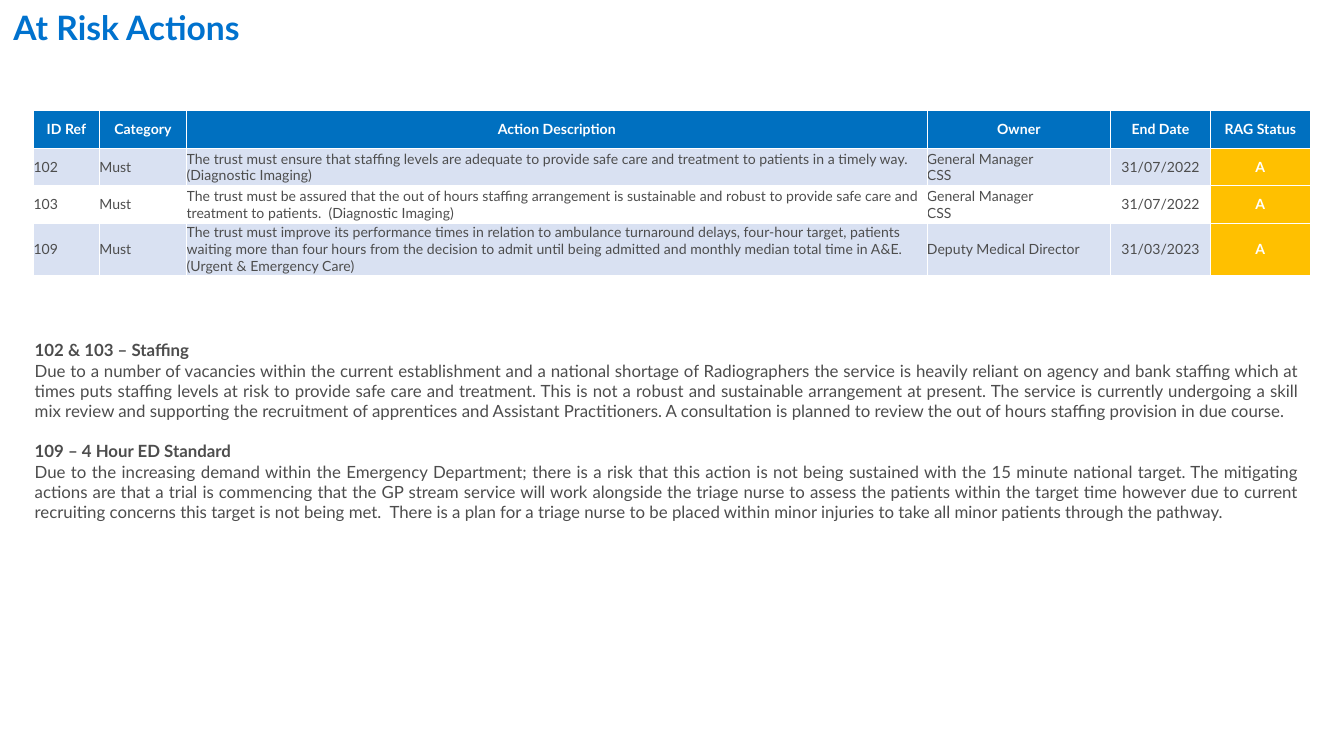
from dataclasses import dataclass

from lxml import etree
from pptx import Presentation
from pptx.dml.color import RGBColor
from pptx.enum import text
from pptx.oxml import ns
from pptx.util import Pt

FONT = "Lato"
COLOURS = {
    "title": "0072CE",
    "header": "0070C0",
    "band": "D9E1F2",
    "amber": "FFC000",
    "ink": "4D4D4D",
    "white": "FFFFFF",
}
LEFT, CENTRE, JUSTIFY = text.PP_ALIGN.LEFT, text.PP_ALIGN.CENTER, text.PP_ALIGN.JUSTIFY
COLUMN_WIDTHS = (35.2, 46.8, 396.6, 98.5, 53.3, 53.6)
HEADINGS = ("ID Ref", "Category", "Action Description", "Owner", "End Date", "RAG Status")


@dataclass
class Row:
    values: tuple
    fill: str | None = None
    is_header: bool = False


@dataclass
class Commentary:
    heading: str
    body: str


STAFFING_ROWS = [
    Row(HEADINGS, "header", True),
    Row(("102", "Must",
         "The trust must ensure that staffing levels are adequate to provide safe care and "
         "treatment to patients in a timely way. (Diagnostic Imaging)",
         "General Manager\nCSS", "31/07/2022", "A"), "band"),
    Row(("103", "Must",
         "The trust must be assured that the out of hours staffing arrangement is sustainable "
         "and robust to provide safe care and treatment to patients.  (Diagnostic Imaging)",
         "General Manager\nCSS", "31/07/2022", "A")),
]
EMERGENCY_ROWS = [
    Row(("109", "Must",
         "The trust must improve its performance times in relation to ambulance turnaround "
         "delays, four-hour target, patients waiting more than four hours from the decision to "
         "admit until being admitted and monthly median total time in A&E.  "
         "(Urgent & Emergency Care)",
         "Deputy Medical Director", "31/03/2023", "A"), "band"),
]
COMMENTARIES = [
    Commentary(
        "102 & 103 – Staffing",
        "Due to a number of vacancies within the current establishment and a national shortage "
        "of Radiographers the service is heavily reliant on agency and bank staffing which at "
        "times puts staffing levels at risk to provide safe care and treatment. This is not a "
        "robust and sustainable arrangement at present. The service is currently undergoing a "
        "skill mix review and supporting the recruitment of apprentices and Assistant "
        "Practitioners. A consultation is planned to review the out of hours staffing provision "
        "in due course."),
    Commentary(
        "109 – 4 Hour ED Standard",
        "Due to the increasing demand within the Emergency Department; there is a risk that this "
        "action is not being sustained with the 15 minute national target. The mitigating "
        "actions are that a trial is commencing that the GP stream service will work alongside "
        "the triage nurse to assess the patients within the target time however due to current "
        "recruiting concerns this target is not being met.  There is a plan for a triage nurse "
        "to be placed within minor injuries to take all minor patients through the pathway."),
]


def rgb(name: str) -> RGBColor:
    return RGBColor.from_string(COLOURS[name])


def write(paragraph, words: str, size: float, colour: str, bold: bool, align) -> None:
    paragraph.text = words
    paragraph.alignment = align
    font = paragraph.font
    font.name, font.size, font.bold = FONT, Pt(size), bold
    font.color.rgb = rgb(colour)


def add_borders(cell) -> None:
    properties = cell._tc.get_or_add_tcPr()
    for position, side in enumerate(("lnL", "lnR", "lnT", "lnB")):
        line = etree.Element(ns.qn(f"a:{side}"), w=str(Pt(0.5)))
        fill = etree.SubElement(line, ns.qn("a:solidFill"))
        etree.SubElement(fill, ns.qn("a:srgbClr"), val=COLOURS["white"])
        properties.insert(position, line)


def fill_cell(cell, words: str, column: int, row: Row) -> None:
    is_status = column == len(HEADINGS) - 1
    strong = row.is_header or is_status
    centred = strong or HEADINGS[column] == "End Date"
    fill = "amber" if is_status and not row.is_header else row.fill
    cell.margin_left = cell.margin_right = cell.margin_top = cell.margin_bottom = 0
    cell.vertical_anchor = text.MSO_ANCHOR.MIDDLE
    if fill:
        cell.fill.solid()
        cell.fill.fore_color.rgb = rgb(fill)
    else:
        cell.fill.background()
    write(cell.text_frame.paragraphs[0], words, 7.5, "white" if strong else "ink",
          strong, CENTRE if centred else LEFT)
    add_borders(cell)


def add_actions(slide, rows: list[Row], top: float, row_height: float) -> None:
    actions = slide.shapes.add_table(
        len(rows), len(HEADINGS), Pt(18), Pt(top),
        Pt(sum(COLUMN_WIDTHS)), Pt(row_height * len(rows))).table
    actions.first_row = actions.horz_banding = False
    for column, width in zip(actions.columns, COLUMN_WIDTHS):
        column.width = Pt(width)
    for index, row in enumerate(rows):
        actions.rows[index].height = Pt(row_height)
        for column, words in enumerate(row.values):
            fill_cell(actions.cell(index, column), words, column, row)


def add_commentary(slide, commentaries: list[Commentary]) -> None:
    frame = slide.shapes.add_textbox(Pt(11.5), Pt(178.6), Pt(690.5), Pt(151)).text_frame
    frame.word_wrap = True
    for index, commentary in enumerate(commentaries):
        heading = frame.add_paragraph() if index else frame.paragraphs[0]
        write(heading, commentary.heading, 9, "ink", True, JUSTIFY)
        if index:
            heading.space_before = Pt(10.8)
        write(frame.add_paragraph(), commentary.body, 9, "ink", False, JUSTIFY)


def main() -> None:
    deck = Presentation()
    deck.slide_width, deck.slide_height = Pt(720), Pt(405)
    slide = deck.slides.add_slide(deck.slide_layouts[5])

    # Title
    title = slide.shapes.title
    title.left, title.top, title.width, title.height = Pt(0), Pt(0), Pt(702), Pt(66)
    title.text_frame.vertical_anchor = text.MSO_ANCHOR.TOP
    title.text_frame.auto_size = text.MSO_AUTO_SIZE.NONE
    write(title.text_frame.paragraphs[0], "At Risk Actions", 18, "title", True, LEFT)

    # Action tables and the commentary below them
    add_actions(slide, STAFFING_ROWS, top=59.3, row_height=20.1)
    add_commentary(slide, COMMENTARIES)
    add_actions(slide, EMERGENCY_ROWS, top=119.6, row_height=28)

    deck.save("out.pptx")


if __name__ == "__main__":
    main()
